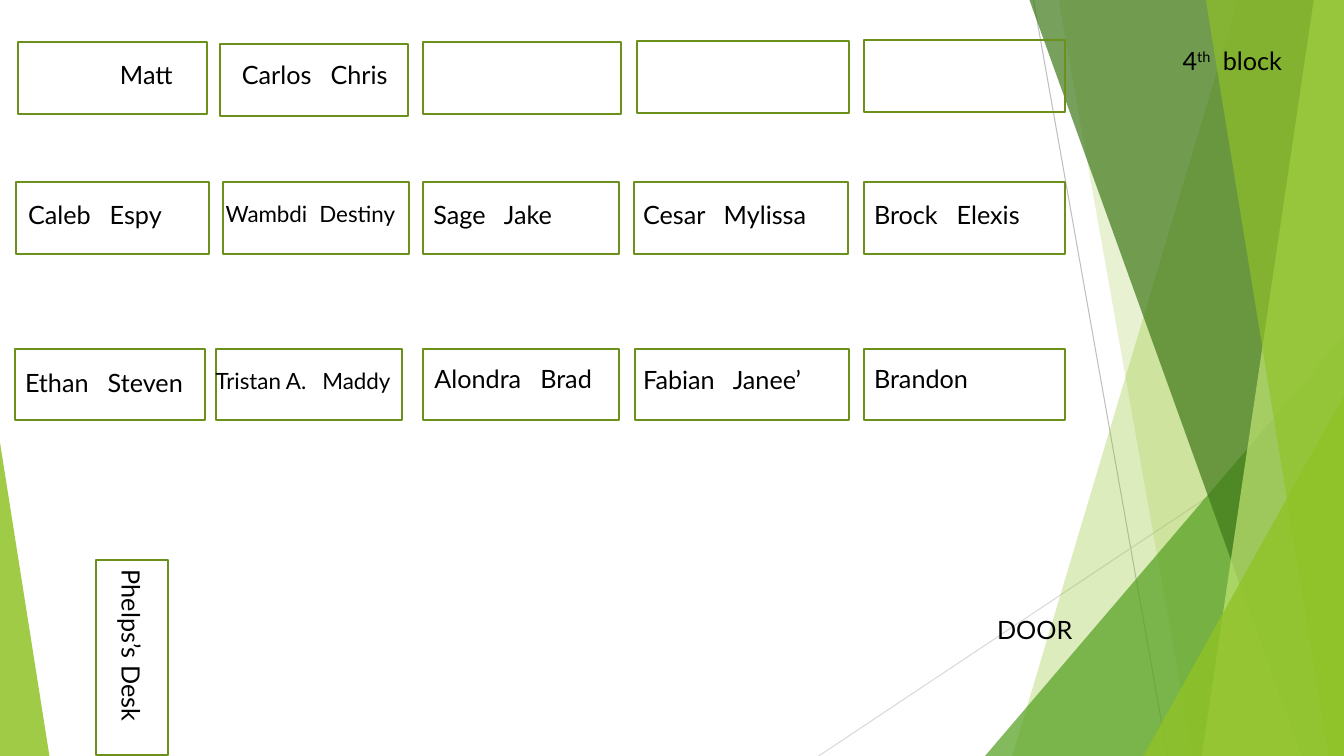
"""Build a classroom seating chart slide with a faceted green backdrop."""
import lxml.etree
import pptx
import pptx.dml.color
import pptx.enum.shapes
import pptx.enum.text
import pptx.oxml.ns
import pptx.util

Inches = pptx.util.Inches
SHAPES = pptx.enum.shapes.MSO_SHAPE
SLIDE_WIDTH, SLIDE_HEIGHT = 13.33, 7.5
GREEN = "90C226"
DESK_HEIGHT = 0.71

RAYS = [
    ("10.25 0 11.58 7.5", "BFBFBF"),
    ("13.33 4.03 8.12 7.5", "D9D9D9"),
]
# Each band reaches the right edge: top left x, bottom left x, colour, opacity.
BANDS_BEHIND = [(12.28, 10.04, GREEN, 30), (10.5, 11.83, GREEN, 20)]
BANDS_FRONT = [
    (10.21, 12.91, "3F7819", 70),
    (13.03, 11.92, "C0E474", 70),
    (11.96, 13.18, GREEN, 65),
]
# Desk left, top, width.
DESKS = [
    (0.18, 0.42, 1.87), (2.18, 0.44, 1.87), (4.2, 0.42, 1.96), (6.32, 0.41, 2.1), (8.57, 0.4, 1.99),
    (0.16, 1.81, 1.91), (2.21, 1.81, 1.85), (4.2, 1.81, 1.94), (6.29, 1.81, 2.12), (8.57, 1.81, 1.99),
    (0.15, 3.46, 1.88), (2.14, 3.46, 1.85), (4.2, 3.46, 1.94), (6.3, 3.46, 2.12), (8.57, 3.46, 1.99),
]
# Left, top, width, names, tab stop of the second name, size.
PAIRS = [
    (2.3, 0.54, 1.72, "Carlos\tChris", 0.88, 18),
    (0.18, 1.93, 1.72, "Caleb\tEspy", 0.81, 18),
    (2.14, 1.94, 2.17, "Wambdi\tDestiny", 0.93, 16),
    (4.2, 1.93, 1.72, "Sage\tJake", 0.7, 18),
    (6.28, 1.93, 1.94, "Cesar\tMylissa", 0.8, 18),
    (8.57, 1.93, 1.72, "Brock\tElexis", 0.82, 18),
    (0.15, 3.59, 1.83, "Ethan\tSteven", 0.82, 18),
    (2.04, 3.59, 2.27, "Tristan A.\tMaddy", 1.06, 16),
    (4.21, 3.56, 1.82, "Alondra\tBrad", 1.05, 18),
    (6.28, 3.57, 1.94, "Fabian\tJanee’", 0.89, 18),
]


def color(value):
    return pptx.dml.color.RGBColor.from_string(value)


def add_child(parent, tag, **attributes):
    child = lxml.etree.SubElement(parent, pptx.oxml.ns.qn(tag))
    for name, value in attributes.items():
        child.set(name, str(value))
    return child


def paint(shape, value, opacity):
    shape.shadow.inherit = False
    shape.line.fill.background()
    shape.fill.solid()
    shape.fill.fore_color.rgb = color(value)
    solid = shape.fill._xPr.find(pptx.oxml.ns.qn("a:solidFill"))
    add_child(solid[0], "a:alpha", val=opacity * 1000)


def add_ray(slide, ends, value):
    ray = slide.shapes.add_connector(
        pptx.enum.shapes.MSO_CONNECTOR.STRAIGHT, *[Inches(float(end)) for end in ends.split()])
    ray.line.color.rgb = color(value)
    ray.line.width = pptx.util.Pt(0.75)
    add_child(ray._element.spPr, "a:effectLst")


def add_band(slide, top_left, bottom_left, value, opacity):
    corners = [(top_left, 0), (SLIDE_WIDTH, 0), (SLIDE_WIDTH, SLIDE_HEIGHT), (bottom_left, SLIDE_HEIGHT)]
    points = [(Inches(x), Inches(y)) for x, y in corners]
    builder = slide.shapes.build_freeform(*points[0])
    builder.add_line_segments(points[1:], close=True)
    paint(builder.convert_to_shape(), value, opacity)


def add_triangle(slide, left, top, width, apex, value, opacity):
    triangle = slide.shapes.add_shape(
        SHAPES.ISOSCELES_TRIANGLE, Inches(left), Inches(top), Inches(width), Inches(SLIDE_HEIGHT - top))
    triangle.adjustments[0] = apex
    paint(triangle, value, opacity)


def add_desk(slide, left, top, width, rotation=0):
    desk = slide.shapes.add_shape(
        SHAPES.RECTANGLE, Inches(left), Inches(top), Inches(width), Inches(DESK_HEIGHT))
    desk.shadow.inherit = False
    desk.fill.background()
    desk.line.color.rgb = color("6B901C")
    desk.line.width = pptx.util.Pt(1.5)
    desk.rotation = rotation


def add_text(slide, left, top, width, *texts, size=18, tab=None, indent=0, rotation=0, raised=None):
    """Add a one-line label; raised is the index of a superscript run."""
    height = 0.4 if size == 18 else 0.37
    box = slide.shapes.add_textbox(Inches(left), Inches(top), Inches(width), Inches(height))
    box.rotation = rotation
    frame = box.text_frame
    frame.word_wrap = True
    frame.auto_size = pptx.enum.text.MSO_AUTO_SIZE.SHAPE_TO_FIT_TEXT
    frame.margin_left = Inches(0.1 + indent)
    paragraph = frame.paragraphs[0]
    if tab:
        tabs = add_child(paragraph._p.get_or_add_pPr(), "a:tabLst")
        add_child(tabs, "a:tab", pos=Inches(tab), algn="l")
    for index, text in enumerate(texts):
        run = paragraph.add_run()
        run.text = text
        run.font.size = pptx.util.Pt(size)
        run.font.name = "Lato"
        run.font.color.rgb = color("000000")
        if index == raised:
            run.font._element.set("baseline", "30000")


def add_backdrop(slide):
    for ray in RAYS:
        add_ray(slide, *ray)
    for band in BANDS_BEHIND:
        add_band(slide, *band)
    add_triangle(slide, 9.77, 3.33, 3.56, 1, "54A021", 72)
    for band in BANDS_FRONT:
        add_band(slide, *band)
    add_triangle(slide, 11.34, 3.93, 1.99, 1, GREEN, 80)
    add_triangle(slide, 0, 4.39, 0.49, 0, GREEN, 85)


def main():
    presentation = pptx.Presentation()
    presentation.slide_width = Inches(SLIDE_WIDTH)
    presentation.slide_height = Inches(SLIDE_HEIGHT)
    slide = presentation.slides.add_slide(presentation.slide_layouts[6])
    add_backdrop(slide)
    for desk in DESKS:
        add_desk(slide, *desk)
    add_desk(slide, 0.34, 6.17, 1.94, rotation=90)
    add_text(slide, 9.79, 6.05, 2.01, "DOOR")
    add_text(slide, 0.3, 6.36, 2.01, "Phelps’s Desk", rotation=90)
    add_text(slide, 11.63, 0.4, 1.41, "4", "th", "\tblock", raised=1, tab=0.4)
    add_text(slide, 0.32, 0.54, 1.72, "Matt", indent=0.77)
    for left, top, width, names, tab, size in PAIRS:
        add_text(slide, left, top, width, names, tab=tab, size=size)
    add_text(slide, 8.57, 3.56, 1.72, "Brandon")
    presentation.save("out.pptx")


if __name__ == "__main__":
    main()
